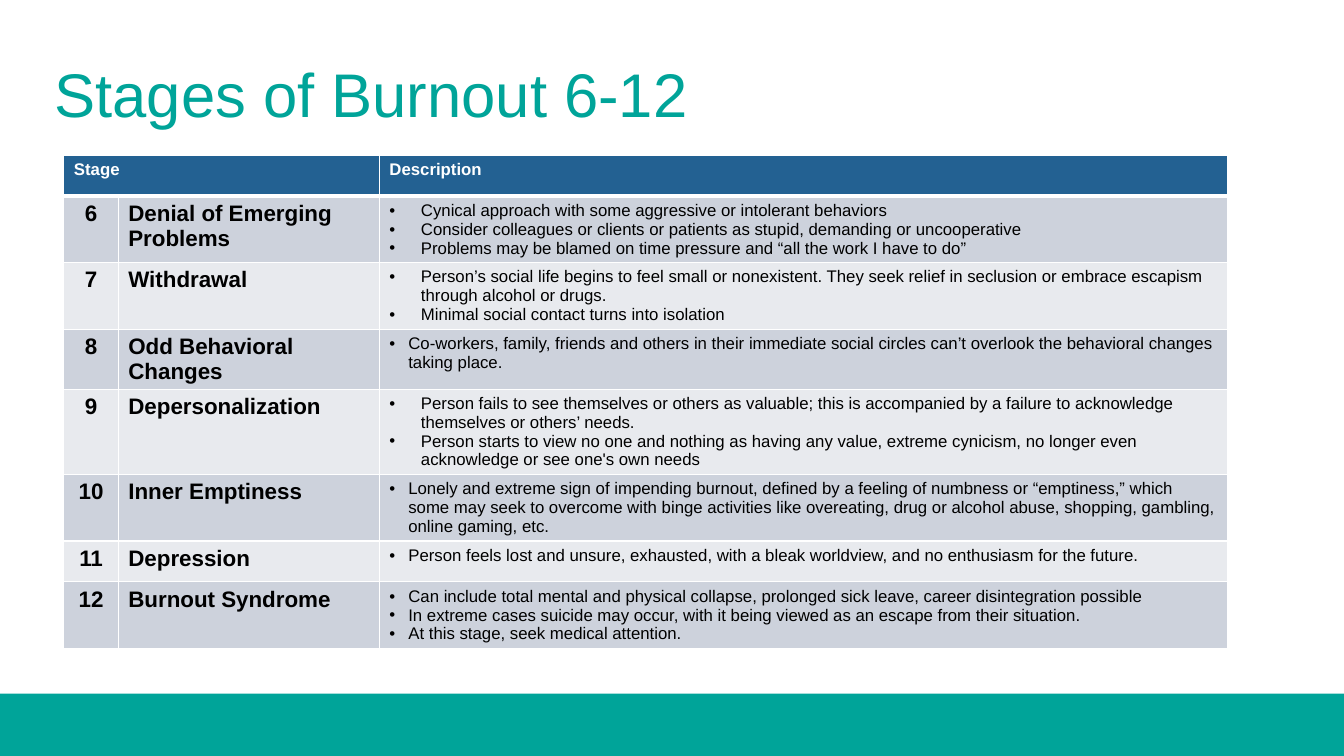
"""Build the slide on burnout stages 6 to 12."""
from dataclasses import dataclass

from lxml import etree
from pptx import Presentation
from pptx.dml.color import RGBColor
from pptx.enum import shapes, text
from pptx.oxml import ns
from pptx.util import Pt


@dataclass(frozen=True)
class Theme:
    font: str = "Arial"
    teal: str = "00A499"
    navy: str = "236192"
    white: str = "FFFFFF"
    black: str = "000000"
    bands: tuple = ("CDD2DC", "E8EAEE")
    title_size: float = 44
    stage_size: float = 16
    body_size: float = 12


THEME = Theme()
PAGE_WIDTH, PAGE_HEIGHT = 960, 540
COLUMNS = (38.9, 186.5, 606.2)
ROW_HEIGHT = 29.2
WIDE, NARROW = 22.5, 13.5

STAGES = (
    ("6", "Denial of Emerging Problems", WIDE, (
        "Cynical approach with some aggressive or intolerant behaviors",
        "Consider colleagues or clients or patients as stupid, demanding or uncooperative",
        "Problems may be blamed on time pressure and “all the work I have to do”")),
    ("7", "Withdrawal", WIDE, (
        "Person’s social life begins to feel small or nonexistent. They seek relief in "
        "seclusion or embrace escapism through alcohol or drugs.",
        "Minimal social contact turns into isolation")),
    ("8", "Odd Behavioral Changes", NARROW, (
        "Co-workers, family, friends and others in their immediate social circles can’t "
        "overlook the behavioral changes taking place.",)),
    ("9", "Depersonalization", WIDE, (
        "Person fails to see themselves or others as valuable; this is accompanied by a "
        "failure to acknowledge themselves or others’ needs.",
        "Person starts to view no one and nothing as having any value, extreme cynicism, "
        "no longer even acknowledge or see one's own needs")),
    ("10", "Inner Emptiness", NARROW, (
        "Lonely and extreme sign of impending burnout, defined by a feeling of numbness or "
        "“emptiness,” which some may seek to overcome with binge activities like "
        "overeating, drug or alcohol abuse, shopping, gambling, online gaming, etc.",)),
    ("11", "Depression", NARROW, (
        "Person feels lost and unsure, exhausted, with a bleak worldview, and no "
        "enthusiasm for the future.",)),
    ("12", "Burnout Syndrome", NARROW, (
        "Can include total mental and physical collapse, prolonged sick leave, career "
        "disintegration possible",
        "In extreme cases suicide may occur, with it being viewed as an escape from "
        "their situation.",
        "At this stage, seek medical attention.")),
)


def apply(target, formats):
    """Set each attribute named in a dict of format values."""
    for name, value in formats.items():
        setattr(target, name, value)


def paint(fill, color):
    """Give a fill one solid colour."""
    fill.solid()
    fill.fore_color.rgb = RGBColor.from_string(color)


def write(para, words, size, color, bold=False, **formats):
    """Write one formatted span into a paragraph."""
    apply(para, formats)
    span = para.add_run()
    span.text = words
    apply(span.font, {"name": THEME.font, "size": Pt(size), "bold": bold})
    span.font.color.rgb = RGBColor.from_string(color)


def add_bullet(para, indent):
    """Hang a round bullet in front of a paragraph."""
    props = para._p.get_or_add_pPr()
    props.set("marL", str(Pt(indent)))
    props.set("indent", str(-Pt(indent)))
    etree.SubElement(props, ns.qn("a:buFont"), typeface=THEME.font)
    etree.SubElement(props, ns.qn("a:buChar"), char="•")


def add_borders(cell, top=1, bottom=1):
    """Draw white lines around a cell."""
    props = cell._tc.get_or_add_tcPr()
    widths = {"lnL": 1, "lnR": 1, "lnT": top, "lnB": bottom}
    for place, (tag, width) in enumerate(widths.items()):
        line = etree.Element(ns.qn(f"a:{tag}"), w=str(Pt(width)))
        fill = etree.SubElement(line, ns.qn("a:solidFill"))
        etree.SubElement(fill, ns.qn("a:srgbClr"), val=THEME.white)
        props.insert(place, line)


def add_band(page):
    """Add the teal band at the foot of the page."""
    height = 44.6
    box = page.shapes.add_shape(shapes.MSO_SHAPE.RECTANGLE, 0, Pt(PAGE_HEIGHT - height),
                                Pt(PAGE_WIDTH), Pt(height))
    box.shadow.inherit = False
    paint(box.fill, THEME.teal)
    box.line.fill.background()


def set_title(page, words):
    """Place and format the title placeholder."""
    box = page.shapes.title
    apply(box, {"left": Pt(31.7), "top": Pt(25.2), "width": Pt(831.6), "height": Pt(72)})
    apply(box.text_frame, {"vertical_anchor": text.MSO_ANCHOR.BOTTOM, "word_wrap": True,
                           "auto_size": text.MSO_AUTO_SIZE.NONE})
    write(box.text_frame.paragraphs[0], words, THEME.title_size, THEME.teal,
          alignment=text.PP_ALIGN.LEFT, line_spacing=0.9)


def fill_header(table):
    """Fill the header row, its first two cells merged."""
    table.cell(0, 0).merge(table.cell(0, 1))
    for cell in table.rows[0].cells:
        paint(cell.fill, THEME.navy)
        add_borders(cell, bottom=3)
    for column, words in ((0, "Stage"), (2, "Description")):
        para = table.cell(0, column).text_frame.paragraphs[0]
        write(para, words, THEME.body_size, THEME.white, bold=True)


def fill_stage(table, row, stage):
    """Fill one row with a stage number, name and bulleted description."""
    number, name, indent, points = stage
    for cell in table.rows[row].cells:
        paint(cell.fill, THEME.bands[(row - 1) % 2])
        add_borders(cell, top=3 if row == 1 else 1)
    label, heading, details = (cell.text_frame for cell in table.rows[row].cells)
    write(label.paragraphs[0], number, THEME.stage_size, THEME.black, bold=True,
          alignment=text.PP_ALIGN.CENTER)
    write(heading.paragraphs[0], name, THEME.stage_size, THEME.black, bold=True)
    for index, words in enumerate(points):
        para = details.add_paragraph() if index else details.paragraphs[0]
        add_bullet(para, indent)
        write(para, words, THEME.body_size, THEME.black)


def add_stage_table(page):
    """Add the table of stages."""
    frame = page.shapes.add_table(len(STAGES) + 1, len(COLUMNS), Pt(45.6), Pt(110.9),
                                  Pt(sum(COLUMNS)), Pt(370))
    table = frame.table
    for column, width in zip(table.columns, COLUMNS):
        column.width = Pt(width)
    for row in table.rows:
        row.height = Pt(ROW_HEIGHT)
    fill_header(table)
    for row, stage in enumerate(STAGES, 1):
        fill_stage(table, row, stage)
    frame.height = Pt(370)


def main():
    """Build and save the deck."""
    deck = Presentation()
    apply(deck, {"slide_width": Pt(PAGE_WIDTH), "slide_height": Pt(PAGE_HEIGHT)})
    page = deck.slides.add_slide(deck.slide_layouts[5])
    add_band(page)
    set_title(page, "Stages of Burnout 6-12")
    add_stage_table(page)
    deck.save("out.pptx")


if __name__ == "__main__":
    main()
